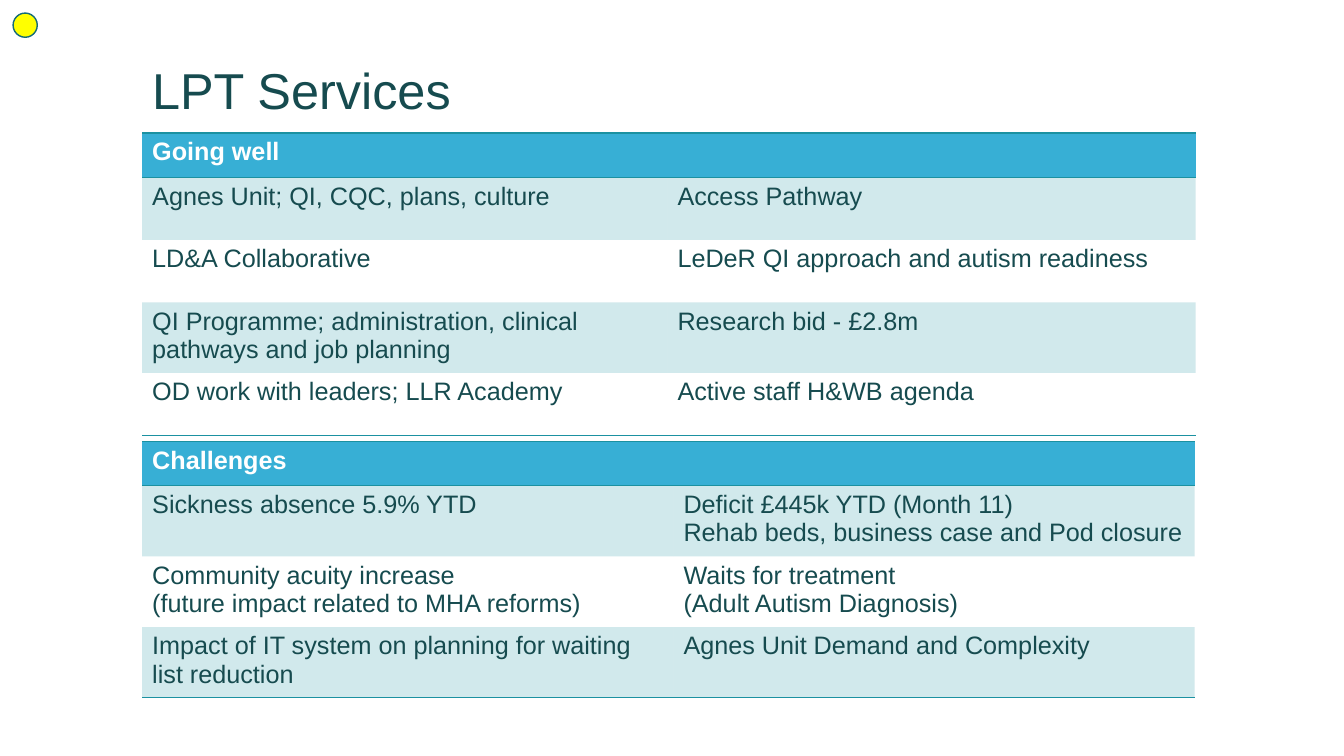
from dataclasses import dataclass

import pptx
import pptx.dml.color
import pptx.enum.shapes
import pptx.enum.text
import pptx.oxml.ns
import pptx.util
from lxml import etree

Inches = pptx.util.Inches
qn = pptx.oxml.ns.qn


@dataclass(frozen=True)
class Theme:
    font: str = "Arial"
    ink: str = "164B4F"
    white: str = "FFFFFF"
    head: str = "37AFD5"
    teal: str = "1B91A1"
    dot: str = "FFFF00"
    edge: str = "146B77"
    title: int = 36
    body: int = 18
    tint: int = 20


THEME = Theme()
NO_STYLE = "{2D5ABB26-0587-4C30-8999-92F81FD0307C}"
HEAD_H = 0.44
ROW_H = 0.62

GOOD = [
    ("Going well", ""),
    ("Agnes Unit; QI, CQC, plans, culture", "Access Pathway"),
    ("LD&A Collaborative", "LeDeR QI approach and autism readiness"),
    ("QI Programme; administration, clinical pathways and job planning",
     "Research bid - £2.8m"),
    ("OD work with leaders; LLR Academy", "Active staff H&WB agenda"),
]
HARD = [
    ("Challenges", ""),
    ("Sickness absence 5.9% YTD",
     "Deficit £445k YTD (Month 11)\nRehab beds, business case and Pod closure"),
    ("Community acuity increase\n(future impact related to MHA reforms)",
     "Waits for treatment\n(Adult Autism Diagnosis)"),
    ("Impact of IT system on planning for waiting list reduction",
     "Agnes Unit Demand and Complexity"),
]


def rgb(code):
    return pptx.dml.color.RGBColor.from_string(code)


def write(frame, text, size=THEME.body, color=THEME.ink, bold=False, gap=1.0):
    frame.word_wrap = True
    frame.text = text
    for para in frame.paragraphs:
        para.line_spacing = gap
        font = para.font
        font.name = THEME.font
        font.size = pptx.util.Pt(size)
        font.bold = bold
        font.color.rgb = rgb(color)


def rule(cell, sides):
    props = cell._tc.get_or_add_tcPr()
    for side in sides:
        line = etree.SubElement(props, qn("a:ln" + side), w=str(pptx.util.Pt(1)))
        fill = etree.SubElement(line, qn("a:solidFill"))
        etree.SubElement(fill, qn("a:srgbClr"), val=THEME.teal)


def paint(cell, color, alpha=100):
    cell.fill.solid()
    cell.fill.fore_color.rgb = rgb(color)
    if alpha < 100:
        tone = cell._tc.tcPr.find(qn("a:solidFill")).find(qn("a:srgbClr"))
        etree.SubElement(tone, qn("a:alpha"), val=str(alpha * 1000))


def add_title(slide, box, text):
    shape = slide.shapes.add_textbox(*map(Inches, box))
    shape.text_frame.vertical_anchor = pptx.enum.text.MSO_ANCHOR.BOTTOM
    write(shape.text_frame, text, size=THEME.title, gap=0.9)


def add_grid(slide, left, top, cols, rows):
    high = HEAD_H + ROW_H * (len(rows) - 1)
    box = (left, top, sum(cols), high)
    frame = slide.shapes.add_table(len(rows), len(cols), *map(Inches, box))
    for style in frame.element.iter(qn("a:tableStyleId")):
        style.text = NO_STYLE
    table = frame.table
    for col, wide in zip(table.columns, cols):
        col.width = Inches(wide)
    for r, texts in enumerate(rows):
        head = r == 0
        table.rows[r].height = Inches(HEAD_H if head else ROW_H)
        for c, text in enumerate(texts):
            cell = table.cell(r, c)
            write(cell.text_frame, text, bold=head,
                  color=THEME.white if head else THEME.ink)
            if head:
                rule(cell, "TB")
                paint(cell, THEME.head)
                continue
            if r == len(rows) - 1:
                rule(cell, "B")
            if r % 2:
                paint(cell, THEME.teal, THEME.tint)
            else:
                cell.fill.background()


def add_dot(slide, box):
    kind = pptx.enum.shapes.MSO_SHAPE.FLOWCHART_CONNECTOR
    dot = slide.shapes.add_shape(kind, *map(Inches, box))
    dot.shadow.inherit = False
    dot.fill.solid()
    dot.fill.fore_color.rgb = rgb(THEME.dot)
    dot.line.color.rgb = rgb(THEME.edge)
    dot.line.width = pptx.util.Pt(1)


def main():
    deck = pptx.Presentation()
    deck.slide_width = Inches(13.33)
    deck.slide_height = Inches(7.5)
    slide = deck.slides.add_slide(deck.slide_layouts[6])
    left = 1.41
    add_title(slide, (left, 0.42, 10.5, 0.82), "LPT Services")
    add_grid(slide, left, 1.32, (5.21, 5.24), GOOD)
    add_grid(slide, left, 4.38, (5.27, 5.17), HARD)
    add_dot(slide, (0.13, 0.13, 0.24, 0.24))
    deck.save("out.pptx")


if __name__ == "__main__":
    main()
